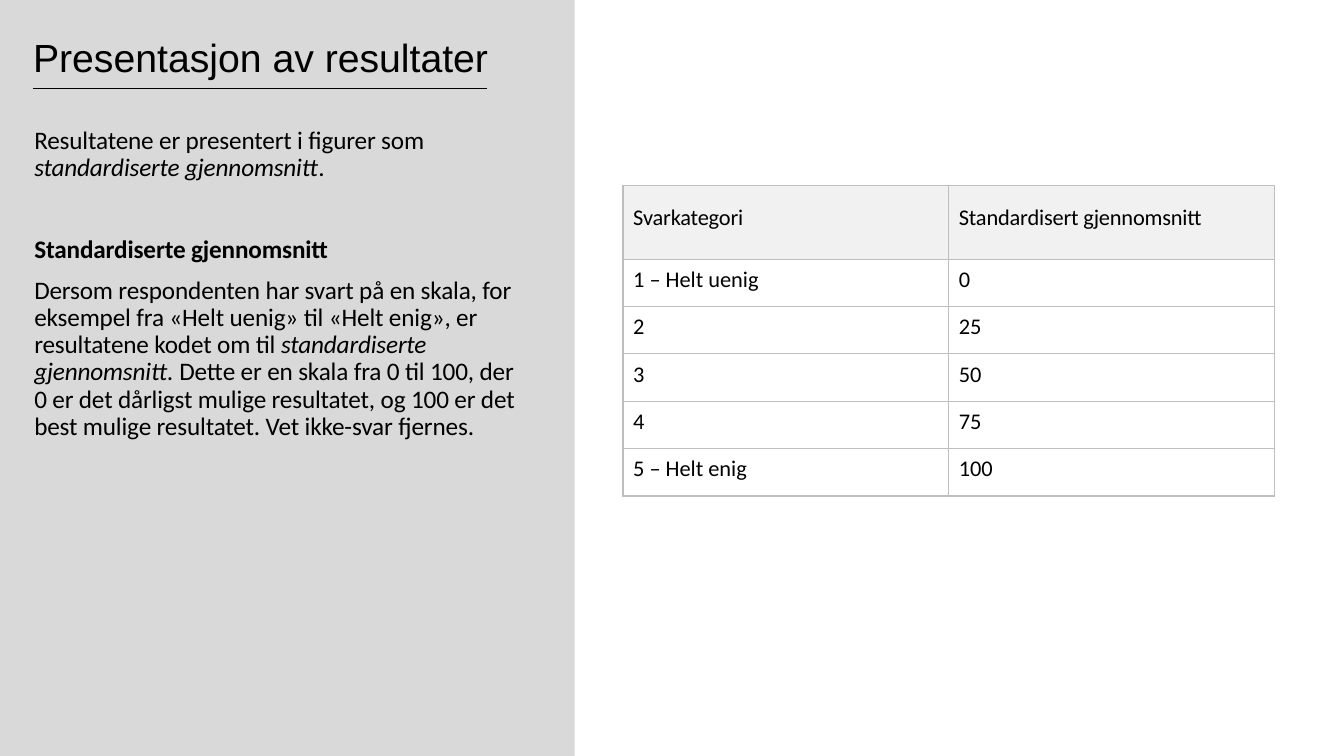
from pptx import Presentation
from pptx.dml.color import RGBColor as Rgb
from pptx.enum.shapes import MSO_CONNECTOR as Conn, MSO_SHAPE as Shape
from pptx.enum.text import MSO_ANCHOR as Anchor
from pptx.util import Inches as In, Pt
from lxml.etree import SubElement as Sub
from pptx.oxml.ns import qn

# Content
TITLE = "Presentasjon av resultater"
# Each paragraph: format, then runs of (text, style)
BODY = [
    (dict(line_spacing=Pt(19.4)),
     [("Resultatene er presentert i figurer som ", {}),
      ("standardiserte gjennomsnitt", dict(italic=True)), (".", {})]),
    (dict(space_before=Pt(37.3)),
     [("Standardiserte gjennomsnitt", dict(bold=True))]),
    (dict(space_before=Pt(9.8), line_spacing=0.9),
     [("Dersom respondenten har svart på en skala, for eksempel fra "
       "«Helt uenig» til «Helt enig», er resultatene kodet om til ", {}),
      ("standardiserte gjennomsnitt. ", dict(italic=True)),
      ("Dette er en skala fra 0 til 100, der 0 er det dårligst mulige "
       "resultatet, og 100 er det best mulige resultatet. "
       "Vet ikke-svar fjernes.", {})]),
]
ROWS = [
    ("Svarkategori", "Standardisert gjennomsnitt"),
    ("1 – Helt uenig", "0"),
    ("2", "25"),
    ("3", "50"),
    ("4", "75"),
    ("5 – Helt enig", "100"),
]

# Sizes and colours
WIDE, HIGH = 13.33, 7.5
PANEL = 5.7
LEFT, RULE = 0.33, 4.5
GRID_X, GRID_Y, COL = 6.18, 1.84, 3.23
HEAD, ROW = 0.73, 0.47
INK, GREY, EDGE, TINT = "000000", "D9D9D9", "BEBEBE", "F1F1F1"


def color(code):
    return Rgb.from_string(code)


def apply(item, vals):
    for key, val in vals.items():
        setattr(item, key, val)


def write(para, text, size, face="Calibri", track=0, **style):
    run = para.add_run()
    run.text = text
    apply(run.font, dict(size=Pt(size), name=face, **style))
    run.font.color.rgb = color(INK)
    if track:
        run.font._element.set("spc", str(track))


def add_box(slide, left, top, width, height, **frame):
    box = slide.shapes.add_textbox(In(left), In(top), In(width), In(height))
    apply(box.text_frame, dict(word_wrap=True, **frame))
    return box.text_frame


def border(cell, sides):
    props = cell._tc.get_or_add_tcPr()
    for side, outer in sides.items():
        line = Sub(props, qn("a:ln" + side), w=str(Pt(1.5 if outer else 0.75)))
        fill = Sub(line, qn("a:solidFill"))
        Sub(fill, qn("a:srgbClr"), val=EDGE)


def add_grid(slide):
    count, cols = len(ROWS), len(ROWS[0])
    tall = [HEAD] + [ROW] * (count - 1)
    table = slide.shapes.add_table(
        count, cols, In(GRID_X), In(GRID_Y), In(COL * cols), In(sum(tall))).table
    apply(table, dict(first_row=False, horz_banding=False))
    for col in table.columns:
        col.width = In(COL)
    for r, texts in enumerate(ROWS):
        table.rows[r].height = In(tall[r])
        for c, text in enumerate(texts):
            cell = table.cell(r, c)
            apply(cell, dict(margin_left=In(0.1), margin_right=0, margin_bottom=0,
                             margin_top=In(0.07 if r else 0.19)))
            border(cell, dict(L=c == 0, R=c == cols - 1, T=r == 0, B=r == count - 1))
            if r:
                cell.fill.background()
            else:
                cell.fill.solid()
                cell.fill.fore_color.rgb = color(TINT)
            write(cell.text_frame.paragraphs[0], text, 16, track=0 if r else -10)


def main():
    deck = Presentation()
    apply(deck, dict(slide_width=In(WIDE), slide_height=In(HIGH)))
    slide = deck.slides.add_slide(deck.slide_layouts[6])

    # Grey panel
    panel = slide.shapes.add_shape(Shape.RECTANGLE, 0, 0, In(PANEL), In(HIGH))
    panel.shadow.inherit = False
    panel.fill.solid()
    panel.fill.fore_color.rgb = color(GREY)
    panel.line.fill.background()

    # Title and rule
    title = add_box(slide, LEFT - 0.1, 0.16, 5.34, 0.86, vertical_anchor=Anchor.MIDDLE)
    title.paragraphs[0].line_spacing = 0.9
    write(title.paragraphs[0], TITLE, 28, "Arial")
    rule = slide.shapes.add_connector(
        Conn.STRAIGHT, In(LEFT), In(0.88), In(LEFT + RULE), In(0.88))
    rule.line.color.rgb = color(INK)
    rule.line.width = Pt(1)
    Sub(rule._element.spPr, qn("a:effectLst"))

    # Table of scores
    add_grid(slide)

    # Body text
    body = add_box(slide, LEFT, 1.21, 4.82, 3.59, margin_left=In(0.01),
                   margin_right=0, margin_bottom=0)
    for n, (form, runs) in enumerate(BODY):
        para = body.add_paragraph() if n else body.paragraphs[0]
        apply(para, form)
        for text, style in runs:
            write(para, text, 18, track=-10, **style)

    deck.save("out.pptx")


if __name__ == "__main__":
    main()
